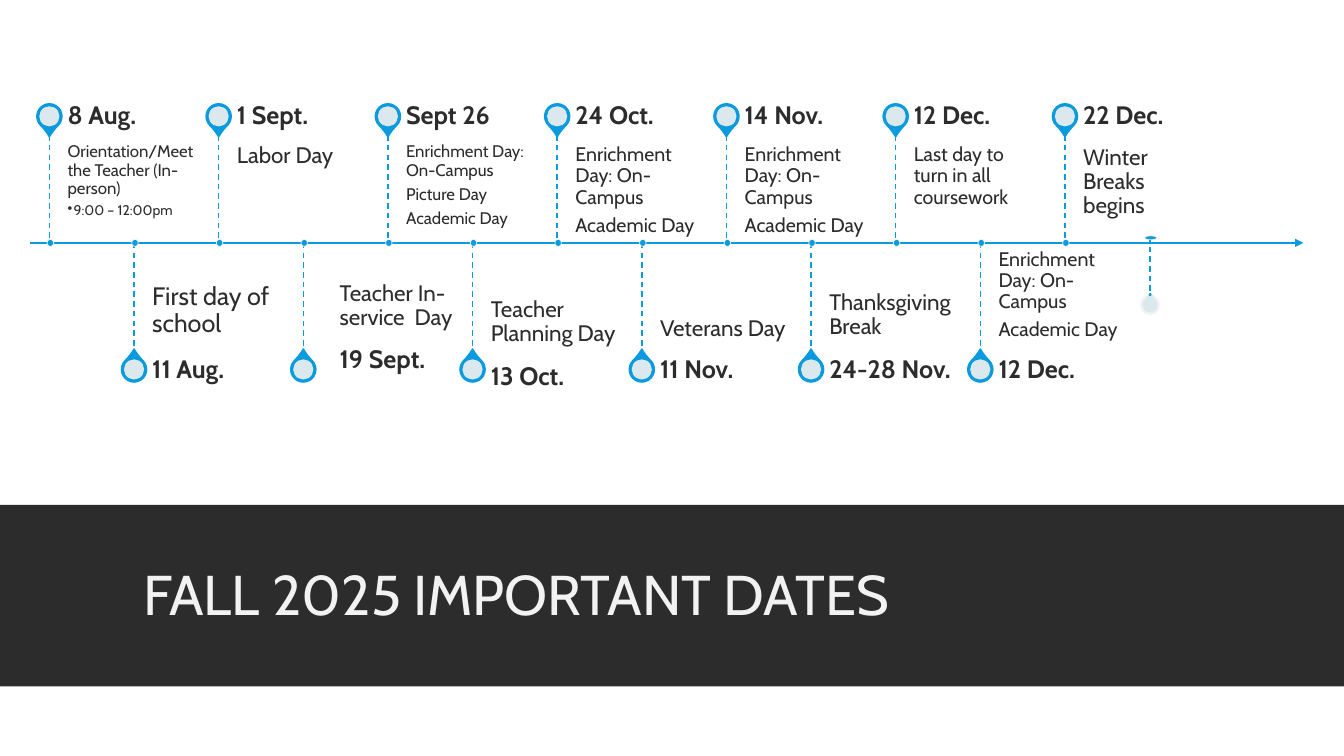
from lxml.etree import SubElement
from pptx import Presentation
from pptx.dml.color import RGBColor
from pptx.enum.dml import MSO_LINE
from pptx.enum.shapes import MSO_CONNECTOR, MSO_SHAPE
from pptx.enum.text import MSO_ANCHOR, MSO_AUTO_SIZE, PP_ALIGN
from pptx.oxml.ns import qn
from pptx.util import Pt

COLORS = {"dark": "2C2C2C", "blue": "099BDD", "light": "F2F2F2"}
FONT = "Cabin"
WIDTH, HEIGHT = 960, 540

AXIS = {"left": 21.6, "right": 931, "y": 173.5}
FIRST_PIN, PIN_STEP = 35.3, 60.45
STEM, HEAD = 77, 90.4  # distances from the axis
LABEL_GAP, LABEL_WIDTH, DATE_HEIGHT = 13, 96, 27.4

# date, size of the description, description, shift of the labels;
# entries alternate above and below the axis
EVENTS = [
    ("8 Aug.", 12, ["Orientation/Meet the Teacher (In-person)", "•9:00 – 12:00pm"], (0, 0)),
    ("11 Aug.", 18, ["First day of school"], (0, 0)),
    ("1 Sept.", 16, ["Labor Day"], (0, 0)),
    ("19 Sept.", 16, ["Teacher In-service  Day"], (13, -6.5)),
    ("Sept 26", 12, ["Enrichment Day: On-Campus", "Picture Day", "Academic Day"], (0, 0)),
    ("13 Oct.", 16, ["Teacher Planning Day"], (0, 5)),
    ("24 Oct.", 14, ["Enrichment Day: On-Campus", "Academic Day"], (0, 0)),
    ("11 Nov.", 16, ["Veterans Day"], (0, 0)),
    ("14 Nov.", 14, ["Enrichment Day: On-Campus", "Academic Day"], (0, 0)),
    ("24-28 Nov.", 16, ["Thanksgiving Break"], (0, 0)),
    ("12 Dec.", 14, ["Last day to turn in all coursework"], (0, 0)),
    ("12 Dec.", 14, ["Enrichment Day: On-Campus", "Academic Day"], (0, 0)),
    ("22 Dec.", 16, ["Winter Breaks begins"], (0, 0)),
]


def color(name):
    return RGBColor.from_string(COLORS[name])


def apply(target, formats):
    for name, value in formats.items():
        setattr(target, name, value)


def add_filled(slide, kind, box, fill, outline=None, outline_width=1):
    shape = slide.shapes.add_shape(kind, *map(Pt, box))
    shape.shadow.inherit = False
    shape.fill.solid()
    shape.fill.fore_color.rgb = color(fill)
    if outline:
        shape.line.color.rgb = color(outline)
        shape.line.width = Pt(outline_width)
    else:
        shape.line.fill.background()
    return shape


def add_line(slide, start, end, width):
    connector = slide.shapes.add_connector(
        MSO_CONNECTOR.STRAIGHT, *map(Pt, (*start, *end)))
    connector.line.color.rgb = color("blue")
    connector.line.width = Pt(width)
    SubElement(connector.element.spPr, qn("a:effectLst"))
    return connector


def centered(x, y, width, height):
    return x - width / 2, y - height / 2, width, height


def add_label(slide, box, paragraphs, size, anchor, insets, bold=False):
    """Write one text box; a paragraph that starts with • becomes a bullet."""
    frame = slide.shapes.add_textbox(*map(Pt, box)).text_frame
    sides = ("margin_left", "margin_top", "margin_right", "margin_bottom")
    apply(frame, {"word_wrap": True, "vertical_anchor": anchor,
                  **dict(zip(sides, map(Pt, insets)))})
    for index, text in enumerate(paragraphs):
        paragraph = frame.paragraphs[0] if index == 0 else frame.add_paragraph()
        bullet = text.startswith("•")
        text_size = size - 2 if bullet else size
        if bullet:
            properties = paragraph._p.get_or_add_pPr()
            properties.set("marL", str(Pt(4.3)))
            properties.set("indent", str(-Pt(4.3)))
            SubElement(properties, qn("a:buChar"), char="•")
        paragraph.add_run().text = text.lstrip("•")
        after = text_size * (0.15 if bullet else 0.35)
        apply(paragraph, {"line_spacing": 0.9, "space_after": Pt(after)})
        apply(paragraph.runs[0].font, {"name": FONT, "size": Pt(text_size), "bold": bold})
        paragraph.runs[0].font.color.rgb = color("dark")


def add_pin(slide, x, head_y, stem, drop_size, rotation, dot):
    """Draw a marker: drop with a pale eye, dashed stem, and dot on the axis."""
    drop = add_filled(slide, MSO_SHAPE.TEAR,
                      centered(x, head_y, drop_size, drop_size), "blue", "blue")
    drop.adjustments[0] = 1.15
    drop.rotation = rotation
    eye = add_filled(slide, MSO_SHAPE.OVAL, centered(x, head_y, 14.4, 14.4), "light")
    eye_color = eye.element.spPr.find(".//" + qn("a:srgbClr"))
    SubElement(eye_color, qn("a:alpha"), val="90000")
    add_line(slide, (x, stem[0]), (x, stem[1]), 1).line.dash_style = MSO_LINE.DASH
    add_filled(slide, MSO_SHAPE.OVAL, centered(*dot), "blue", "light", 0.5)


def add_event(slide, x, axis_y, above, event):
    date, size, description, (shift_x, shift_y) = event
    side = -1 if above else 1
    stem_end = axis_y + side * STEM
    add_pin(slide, x, axis_y + side * HEAD, sorted((axis_y, stem_end)), 18,
            135 if above else 315, (x + 0.7, axis_y, 4.6, 5))

    left = x + LABEL_GAP + shift_x
    body_top = min(axis_y, stem_end) + shift_y
    date_top = body_top - DATE_HEIGHT if above else body_top + STEM
    if above:
        anchor, insets = MSO_ANCHOR.TOP, (0, size * 0.5, size * 0.5, size * 0.75)
    else:
        anchor, insets = MSO_ANCHOR.BOTTOM, (0, size * 0.75, 0, size * 0.5)
    add_label(slide, (left, body_top, LABEL_WIDTH, STEM), description, size, anchor, insets)
    add_label(slide, (left, date_top, LABEL_WIDTH, DATE_HEIGHT), [date], 18,
              MSO_ANCHOR.MIDDLE, (0, 0, 8.6, 0), bold=True)


def add_timeline(slide, left, right, y):
    axis = add_line(slide, (left, y), (right, y), 1.5)
    SubElement(axis.line._get_or_add_ln(), qn("a:tailEnd"), type="triangle")
    for index, event in enumerate(EVENTS):
        add_event(slide, FIRST_PIN + index * PIN_STEP, y, index % 2 == 0, event)
    end_x = FIRST_PIN + len(EVENTS) * PIN_STEP + 0.4
    add_pin(slide, end_x, y + 44.3, (y - 4.3, y + 37.5), 10, 315,
            (end_x + 0.4, y - 3.6, 8.6, 2.9))


def add_title_band(slide, left, top, width, height):
    band = add_filled(slide, MSO_SHAPE.RECTANGLE, (left, top, width, height), "dark")
    title = slide.shapes.title
    title.element.addprevious(band.element)
    apply(title, {"left": Pt(left + 95), "top": Pt(top + 7.2),
                  "width": Pt(770), "height": Pt(118.8)})
    frame = title.text_frame
    frame.text = "FALL 2025 IMPORTANT DATES"
    apply(frame, {"word_wrap": True, "auto_size": MSO_AUTO_SIZE.NONE,
                  "vertical_anchor": MSO_ANCHOR.MIDDLE})
    paragraph = frame.paragraphs[0]
    apply(paragraph, {"alignment": PP_ALIGN.LEFT, "line_spacing": 0.85})
    apply(paragraph.runs[0].font, {"name": FONT, "size": Pt(40)})
    paragraph.runs[0].font.color.rgb = color("light")


def main():
    presentation = Presentation()
    apply(presentation, {"slide_width": Pt(WIDTH), "slide_height": Pt(HEIGHT)})
    slide = presentation.slides.add_slide(presentation.slide_layouts.get_by_name("Title Only"))
    add_title_band(slide, 0, 360.7, WIDTH, 129.6)
    add_timeline(slide, **AXIS)
    presentation.save("out.pptx")


if __name__ == "__main__":
    main()
